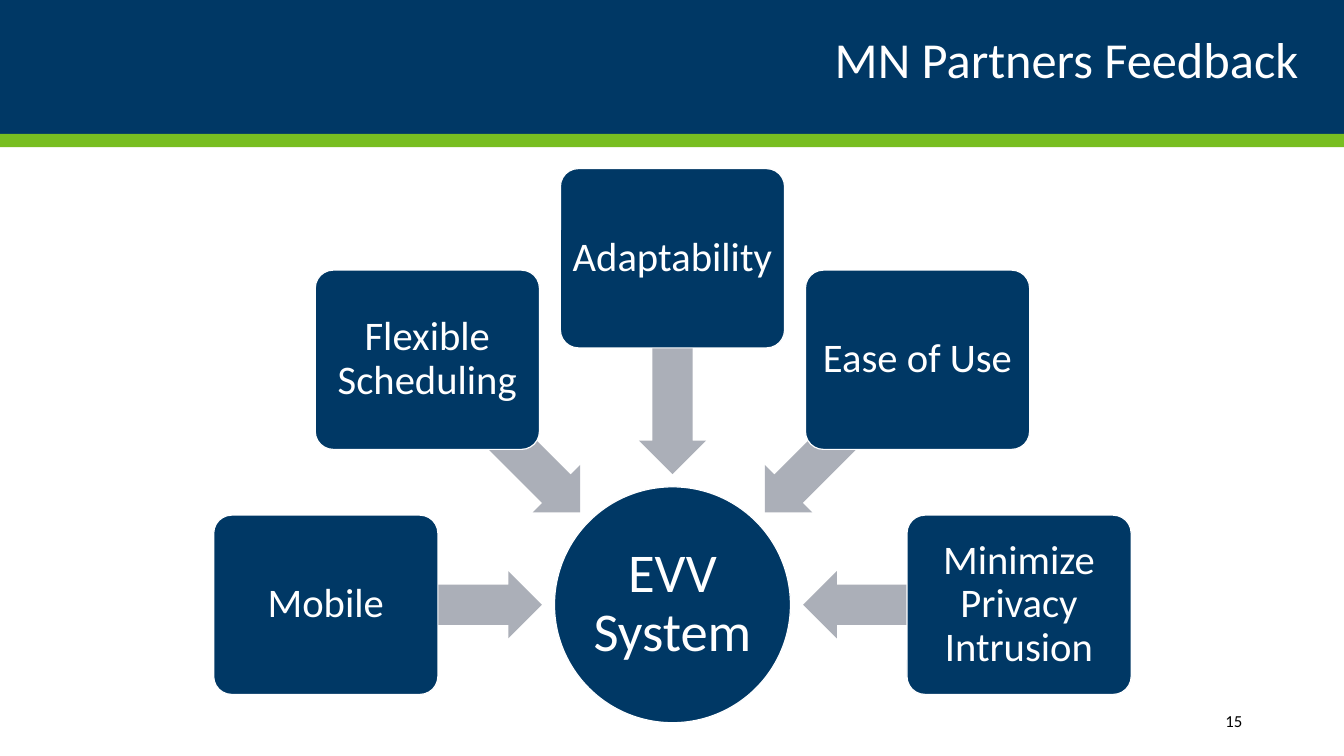
"""Build the feedback slide: five partner wishes pointing at one central system."""
from math import cos, radians, sin

from pptx import Presentation
from pptx.dml.color import RGBColor
from pptx.enum.shapes import MSO_SHAPE
from pptx.enum.text import MSO_ANCHOR, PP_ALIGN
from pptx.util import Inches, Pt

NAVY = RGBColor(0x00, 0x38, 0x65)
GREEN = RGBColor(0x78, 0xBE, 0x21)
GREY = RGBColor(0xAB, 0xAF, 0xB8)
WHITE = RGBColor(0xFF, 0xFF, 0xFF)
BLACK = RGBColor(0x00, 0x00, 0x00)

SLIDE_W, SLIDE_H = 13.33, 7.5
WISHES = ["Mobile", "Flexible Scheduling", "Adaptability", "Ease of Use",
          "Minimize Privacy Intrusion"]


def write(shape, text, size, color=WHITE, align=PP_ALIGN.CENTER, spacing=0.9,
          inset=(0.06, 0.06)):
    """Put formatted, vertically centred text into a shape."""
    frame = shape.text_frame
    frame.word_wrap = True
    frame.vertical_anchor = MSO_ANCHOR.MIDDLE
    frame.margin_left = frame.margin_right = Inches(inset[0])
    frame.margin_top = frame.margin_bottom = Inches(inset[1])
    paragraph = frame.paragraphs[0]
    paragraph.alignment = align
    paragraph.line_spacing = spacing
    run = paragraph.add_run()
    run.text = text
    run.font.size = Pt(size)
    run.font.name = "Calibri"
    run.font.color.rgb = color


def add_block(slide, preset, box, fill, outlined=False):
    """Add a flat filled shape, with a thin white outline if asked."""
    block = slide.shapes.add_shape(preset, *map(Inches, box))
    block.shadow.inherit = False
    block.fill.solid()
    block.fill.fore_color.rgb = fill
    if outlined:
        block.line.color.rgb = WHITE
        block.line.width = Pt(0.85)
    else:
        block.line.fill.background()
    return block


def centered(x, y, width, height):
    """Return the box of the given size around a centre point."""
    return x - width / 2, y - height / 2, width, height


def add_header(slide, box, title):
    """Draw the navy band, its green edge and the right-aligned title."""
    left, top, width, height = box
    band = 0.91 * height
    add_block(slide, MSO_SHAPE.RECTANGLE, (left, top, width, band), NAVY)
    add_block(slide, MSO_SHAPE.RECTANGLE,
              (left, top + band, width, height - band), GREEN)
    heading = slide.shapes.add_textbox(
        *map(Inches, (left, top - 0.06, width - 0.45, band + 0.03)))
    write(heading, title, 36, align=PP_ALIGN.RIGHT, inset=(0, 0.05))


def add_radial(slide, box, center, wishes):
    """Draw the hub with wishes spread on a half circle, arrows pointing inward."""
    left, top, width, height = box
    hub_size = 0.26 * width
    hub_x, hub_y = left + width / 2, top + height - hub_size / 2
    wish_radius, arrow_radius = 0.382 * width, 0.263 * width
    wish_w = 0.247 * width
    wish_h = 0.8 * wish_w

    hub = add_block(slide, MSO_SHAPE.OVAL,
                    centered(hub_x, hub_y, hub_size, hub_size), NAVY, outlined=True)
    write(hub, center, 39, inset=(0.03, 0.03))

    step = 180 / (len(wishes) - 1)
    for index, wish in enumerate(wishes):
        angle = 180 + index * step
        across, down = cos(radians(angle)), sin(radians(angle))
        arrow = add_block(
            slide, MSO_SHAPE.LEFT_ARROW,
            centered(hub_x + arrow_radius * across, hub_y + arrow_radius * down,
                     0.238 * width, 0.074 * width), GREY)
        arrow.adjustments[0] = 0.6
        arrow.adjustments[1] = 0.5
        arrow.rotation = angle % 360
        card = add_block(
            slide, MSO_SHAPE.ROUNDED_RECTANGLE,
            centered(hub_x + wish_radius * across, hub_y + wish_radius * down,
                     wish_w, wish_h), NAVY, outlined=True)
        card.adjustments[0] = 0.1
        write(card, wish, 29)


def add_page_number(slide, box, number):
    """Write the page number at the lower right."""
    page = slide.shapes.add_textbox(*map(Inches, box))
    write(page, number, 12, color=BLACK, align=PP_ALIGN.RIGHT, spacing=1,
          inset=(0.1, 0.05))


def main():
    """Assemble and save the slide."""
    deck = Presentation()
    deck.slide_width, deck.slide_height = Inches(SLIDE_W), Inches(SLIDE_H)
    slide = deck.slides.add_slide(deck.slide_layouts[6])
    add_header(slide, (0, 0, SLIDE_W, 1.46), "MN Partners Feedback")
    add_radial(slide, (2.17, 1.68, 9, 5.49), "EVV System", WISHES)
    add_page_number(slide, (10.82, 6.95, 0.12 * SLIDE_W, 0.4), "15")
    deck.save("out.pptx")


if __name__ == "__main__":
    main()
